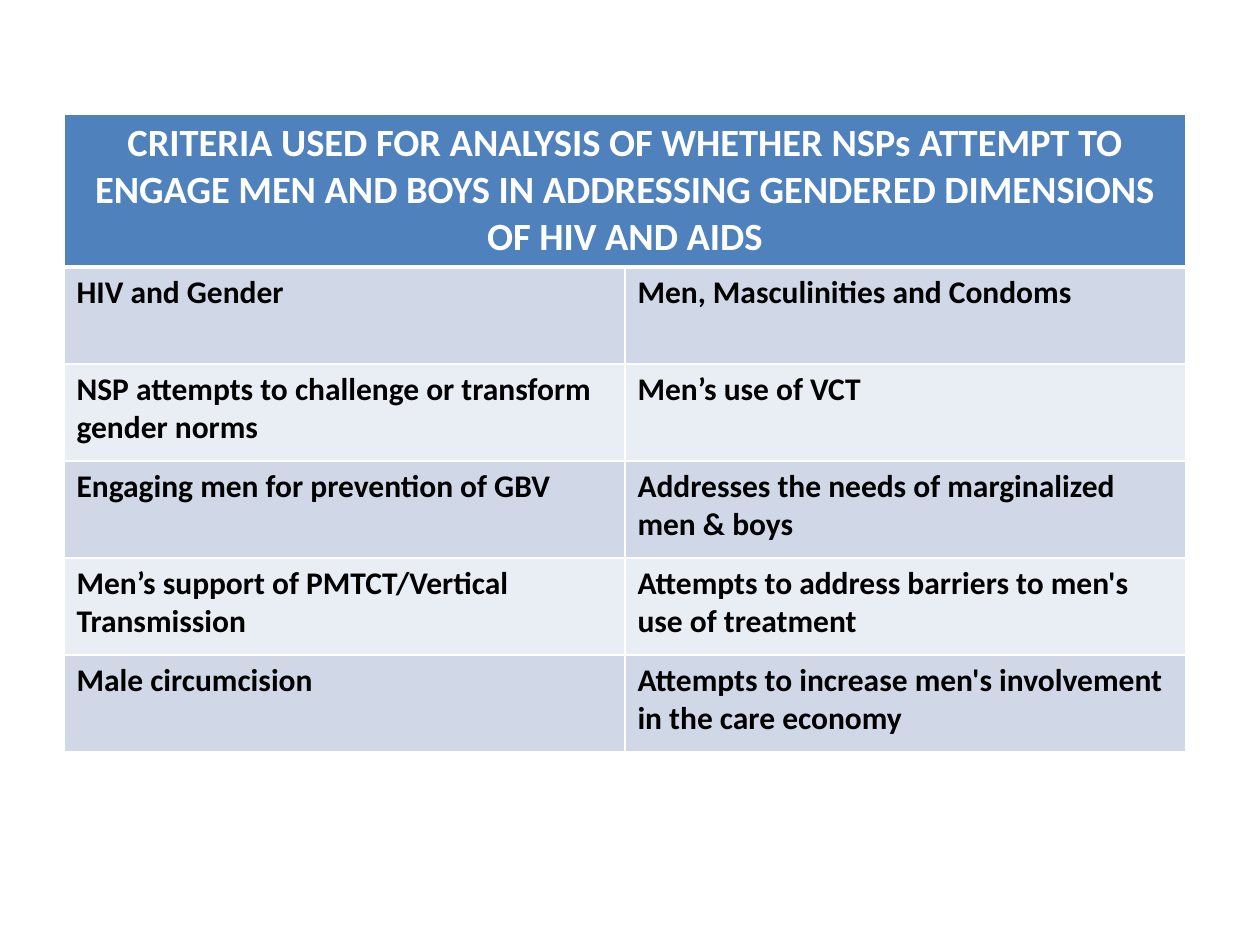
"""Build a slide with a table of criteria for analysing how NSPs engage men and boys."""
from lxml import etree
from pptx import Presentation
from pptx.dml.color import RGBColor
from pptx.enum.text import PP_ALIGN
from pptx.oxml.ns import qn
from pptx.util import Pt

CENTER, LEFT = PP_ALIGN.CENTER, PP_ALIGN.LEFT
PX = 914400 // 126
COLORS = {"header": "4F81BD", "odd": "D0D8E8", "even": "E9EDF4",
          "white": "FFFFFF", "black": "000000"}
TITLE = ("CRITERIA USED FOR ANALYSIS OF WHETHER NSPs ATTEMPT TO ENGAGE MEN AND BOYS "
         "IN ADDRESSING GENDERED DIMENSIONS OF HIV AND AIDS")
ROWS = [
    (TITLE, ""),
    ("HIV and Gender", "Men, Masculinities and Condoms"),
    ("NSP attempts to challenge or transform gender norms", "Men’s use of VCT"),
    ("Engaging men for prevention of GBV", "Addresses the needs of marginalized men & boys"),
    ("Men’s support of PMTCT/Vertical Transmission",
     "Attempts to address barriers to men's use of treatment"),
    ("Male circumcision", "Attempts to increase men's involvement in the care economy"),
]
LEFT_PX, TOP_PX, COL_PX, HEADER_PX, ROW_PX = 64, 114, 561, 152, 97


def add_border(cell, index, side, width):
    ln = etree.Element(qn(f"a:{side}"), w=str(Pt(width)))
    fill = etree.SubElement(ln, qn("a:solidFill"))
    etree.SubElement(fill, qn("a:srgbClr"), val=COLORS["white"])
    cell._tc.get_or_add_tcPr().insert(index, ln)


prs = Presentation()
prs.slide_width, prs.slide_height = 1260 * PX, 945 * PX
s = prs.slides.add_slide(prs.slide_layouts[6])
height = HEADER_PX + ROW_PX * (len(ROWS) - 1)
table = s.shapes.add_table(len(ROWS), 2, LEFT_PX * PX, TOP_PX * PX,
                           2 * COL_PX * PX, height * PX).table
for col in table.columns:
    col.width = COL_PX * PX
table.cell(0, 0).merge(table.cell(0, 1))

for i, texts in enumerate(ROWS):
    header = i == 0
    table.rows[i].height = (HEADER_PX if header else ROW_PX) * PX
    band = "header" if header else "odd" if i % 2 else "even"
    font = {"name": "Calibri", "size": Pt(22 if header else 18), "bold": True}
    for j, text in enumerate(texts):
        cell = table.cell(i, j)
        cell.fill.solid()
        cell.fill.fore_color.rgb = RGBColor.from_string(COLORS[band])
        for k, side in enumerate(("lnL", "lnR", "lnT", "lnB")):
            add_border(cell, k, side, 3 if header and side == "lnB" else 1)
        if not text:
            continue
        p = cell.text_frame.paragraphs[0]
        p.alignment = CENTER if header else LEFT
        r = p.add_run()
        r.text = text
        for name, value in font.items():
            setattr(r.font, name, value)
        r.font.color.rgb = RGBColor.from_string(COLORS["white" if header else "black"])

prs.save("out.pptx")
